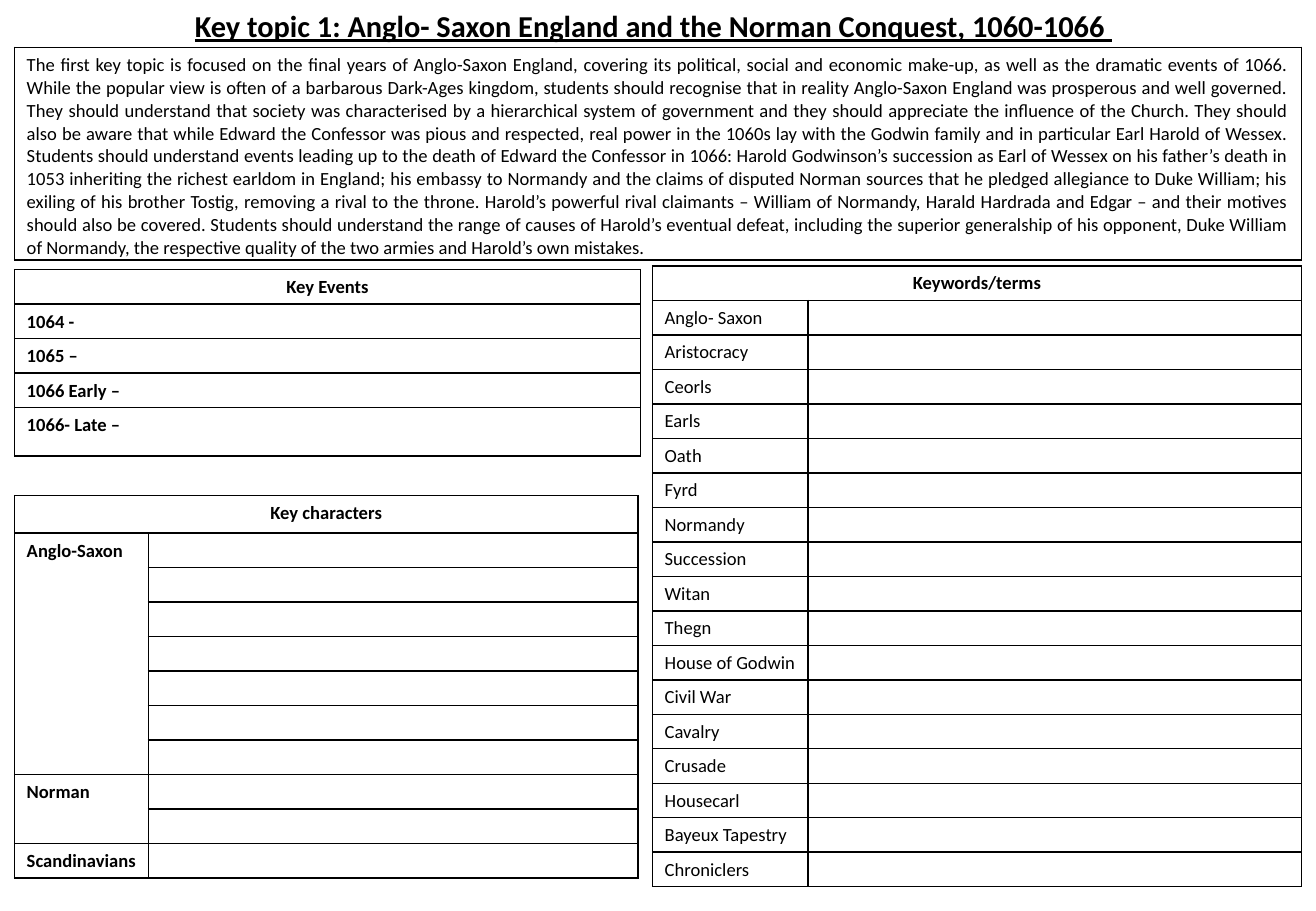
"""Build a worksheet slide on Anglo-Saxon England and the Norman Conquest."""
import pptx
import pptx.util
import pptx.dml.color
import pptx.enum.text
import pptx.oxml
import pptx.oxml.ns

BLACK = pptx.dml.color.RGBColor(0, 0, 0)
ALIGN = pptx.enum.text.PP_ALIGN
FONT = "Calibri"
STEP = pptx.util.Inches(0.01)
LEFT = 12
ROW = 28.3
SPACE = pptx.oxml.ns.nsdecls("a")

deck = pptx.Presentation()
deck.slide_width = 1083 * STEP
deck.slide_height = 750 * STEP
slide = deck.slides.add_slide(deck.slide_layouts[6])


def style(para, size, bold, align):
    """Format one paragraph and its runs."""
    para.alignment = align
    for run in para.runs:
        run.font.name = FONT
        run.font.size = pptx.util.Pt(size)
        run.font.bold = bold
        run.font.color.rgb = BLACK
    if not para.runs:
        para._p.append(pptx.oxml.parse_xml(f'<a:endParaRPr {SPACE} sz="{size * 100}"/>'))


def grid(left, top, cols, rows, texts, bold, first=ALIGN.CENTER):
    """Draw a black ruled table and return it."""
    frame = slide.shapes.add_table(
        len(rows), len(cols), int(left * STEP), int(top * STEP),
        int(sum(cols) * STEP), int(sum(rows) * STEP))
    table = frame.table
    table.first_row = table.horz_banding = False
    for col, width in zip(table.columns, cols):
        col.width = int(width * STEP)
    for i, (row, height) in enumerate(zip(table.rows, rows)):
        row.height = int(height * STEP)
        for j, cell in enumerate(row.cells):
            cell.text_frame.text = texts[i] if j == 0 else ""
            style(cell.text_frame.paragraphs[0], 11, bold or i == 0 and len(rows) > 1,
                  first if i == 0 else ALIGN.LEFT)
            cell.fill.background()
            for k, side in enumerate("LRTB"):
                cell._tc.tcPr.insert(k, pptx.oxml.parse_xml(
                    f'<a:ln{side} {SPACE} w="12700"><a:solidFill>'
                    f'<a:srgbClr val="{BLACK}"/></a:solidFill></a:ln{side}>'))
    if len(cols) > 1:
        table.cell(0, 0).merge(table.cell(0, 1))
    return table


title = slide.shapes.add_textbox(0, STEP, 1076 * STEP, 40 * STEP).text_frame
title.word_wrap = True
title.auto_size = pptx.enum.text.MSO_AUTO_SIZE.SHAPE_TO_FIT_TEXT
title.text = "Key topic 1: Anglo- Saxon England and the Norman Conquest, 1060-1066 "
style(title.paragraphs[0], 18, True, ALIGN.CENTER)
title.paragraphs[0].runs[0].font.underline = True

intro = [
    "The first key topic is focused on the final years of Anglo-Saxon England, covering its "
    "political, social and economic make-up, as well as the dramatic events of 1066.",
    "While the popular view is often of a barbarous Dark-Ages kingdom, students should recognise "
    "that in reality Anglo-Saxon England was prosperous and well governed.",
    "They should understand that society was characterised by a hierarchical system of "
    "government and they should appreciate the influence of the Church.",
    "They should also be aware that while Edward the Confessor was pious and respected, real "
    "power in the 1060s lay with the Godwin family and in particular Earl Harold of Wessex.",
    "Students should understand events leading up to the death of Edward the Confessor in 1066: "
    "Harold Godwinson’s succession as Earl of Wessex on his father’s death in 1053 inheriting "
    "the richest earldom in England; his embassy to Normandy and the claims of disputed Norman "
    "sources that he pledged allegiance to Duke William; his exiling of his brother Tostig, "
    "removing a rival to the throne.",
    "Harold’s powerful rival claimants – William of Normandy, Harald Hardrada and Edgar – and "
    "their motives should also be covered.",
    "Students should understand the range of causes of Harold’s eventual defeat, including the "
    "superior generalship of his opponent, Duke William of Normandy, the respective quality of "
    "the two armies and Harold’s own mistakes."]
grid(LEFT, 39, [1059], [175], [" ".join(intro)], False, ALIGN.JUSTIFY)

people = {"Anglo-Saxon": 7, "Norman": 2, "Scandinavians": 1}
names = ["Key characters"]
for group, count in people.items():
    names += [group] + [""] * (count - 1)
cast = grid(LEFT, 408, [110, 403], [31] + [ROW] * 10, names, True)
start = 1
for count in people.values():
    if count > 1:
        cast.cell(start, 0).merge(cast.cell(start + count - 1, 0))
    start += count

terms = [
    "Keywords/terms", "Anglo- Saxon", "Aristocracy", "Ceorls", "Earls", "Oath", "Fyrd",
    "Normandy", "Succession", "Witan", "Thegn", "House of Godwin", "Civil War", "Cavalry",
    "Crusade", "Housecarl", "Bayeux Tapestry", "Chroniclers"]
grid(537, 219, [128, 406], [ROW] * len(terms), terms, False)

events = ["Key Events", "1064 -", "1065 –", "1066 Early –", "1066- Late –"]
grid(LEFT, 222, [515], [ROW] * 4 + [40], events, True)

deck.save("out.pptx")
